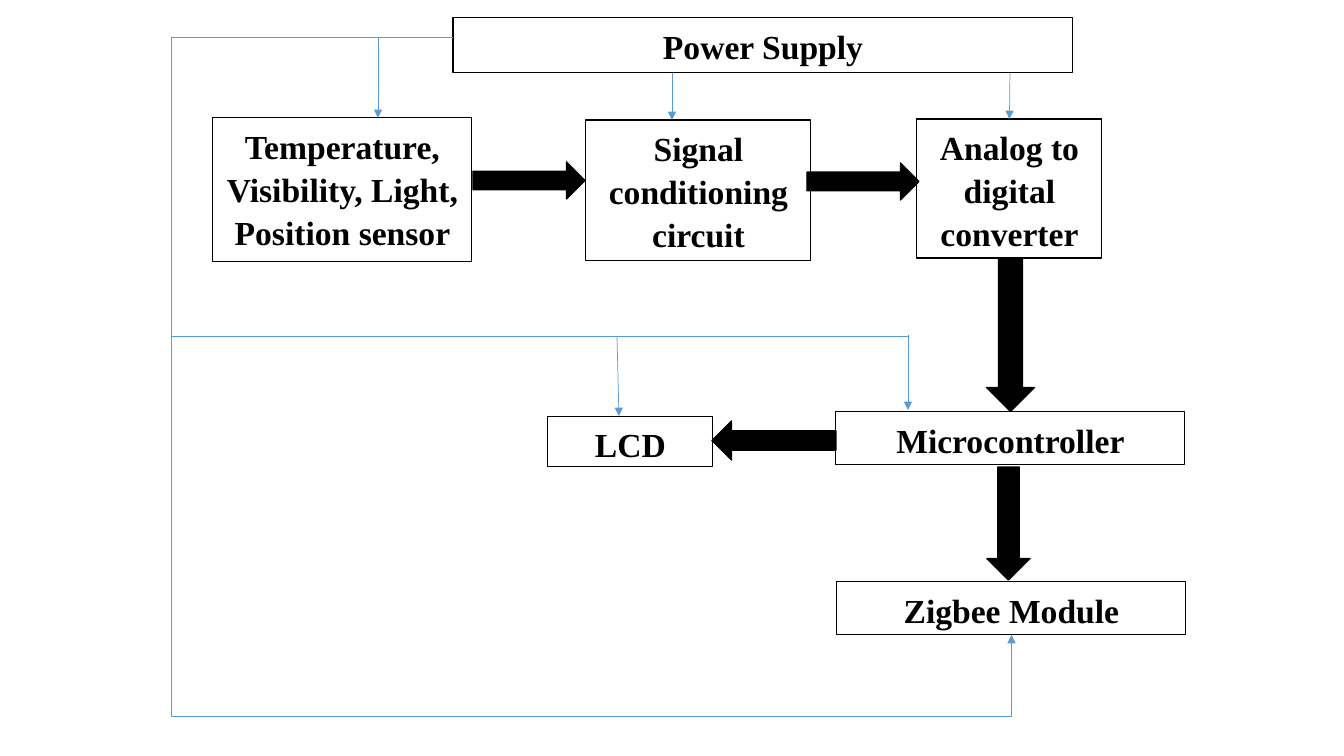
from lxml.etree import SubElement
from pptx import Presentation
from pptx.dml.color import RGBColor
from pptx.enum.shapes import MSO_CONNECTOR as Connector, MSO_SHAPE as Shape
from pptx.enum.text import MSO_ANCHOR as Anchor, PP_ALIGN as Align
from pptx.oxml.ns import qn
from pptx.util import Pt

EMU_PER_PX = 914400 / 100.8


def px(value):
    return round(value * EMU_PER_PX)


def color(hex_string):
    return RGBColor.from_string(hex_string)


class BlockDiagram:
    font_name = "Times New Roman"
    font_size = 24
    ink = "000000"
    paper = "FFFFFF"
    wire_color = "5B9BD5"

    def __init__(self, presentation):
        self.slide = presentation.slides.add_slide(presentation.slide_layouts[6])

    def add_shape(self, kind, box, fill, line_width):
        shape = self.slide.shapes.add_shape(kind, *map(px, box))
        shape.shadow.inherit = False
        shape.fill.solid()
        shape.fill.fore_color.rgb = color(fill)
        shape.line.color.rgb = color(self.ink)
        shape.line.width = Pt(line_width)
        return shape

    def block(self, text, *box):
        shape = self.add_shape(Shape.RECTANGLE, box, self.paper, 0.75)
        frame = shape.text_frame
        frame.word_wrap = True
        frame.vertical_anchor = Anchor.TOP
        paragraph = frame.paragraphs[0]
        paragraph.alignment = Align.CENTER
        paragraph.line_spacing = 1.07
        paragraph.space_after = Pt(8)
        run = paragraph.add_run()
        run.text = text
        run.font.name = self.font_name
        run.font.size = Pt(self.font_size)
        run.font.bold = True
        run.font.color.rgb = color(self.ink)
        return shape

    def flow_arrow(self, left, top, width, height, rotation=0):
        box = (left, top, width, height)
        shape = self.add_shape(Shape.RIGHT_ARROW, box, self.ink, 1)
        shape.rotation = rotation

    def wire(self, start, end, arrow=False, kind=Connector.STRAIGHT):
        connector = self.slide.shapes.add_connector(kind, *map(px, start + end))
        connector.line.color.rgb = color(self.wire_color)
        connector.line.width = Pt(0.5)
        properties = connector._element.spPr
        if arrow:
            SubElement(properties.find(qn("a:ln")), qn("a:tailEnd"), type="triangle")
        SubElement(properties, qn("a:effectLst"))
        return connector

    def bent_wire(self, start, end, adjustments):
        connector = self.wire(start, end, True, Connector.ELBOW)
        geometry = connector._element.spPr.find(qn("a:prstGeom"))
        geometry.set("prst", "bentConnector4")
        guides = geometry.find(qn("a:avLst"))
        for number, value in enumerate(adjustments, 1):
            SubElement(guides, qn("a:gd"), name=f"adj{number}", fmla=f"val {value}")
        return connector


def main():
    presentation = Presentation()
    presentation.slide_width = px(1344)
    presentation.slide_height = px(756)
    diagram = BlockDiagram(presentation)

    diagram.block("Temperature, Visibility, Light, Position sensor", 213, 118, 259, 144)
    diagram.block("Signal conditioning circuit", 586, 120, 225, 141)
    converter = diagram.block("Analog to digital converter", 917, 119, 185, 139)
    diagram.block("Microcontroller", 836, 412, 349, 53)
    zigbee = diagram.block("Zigbee Module", 837, 582, 349, 53)
    diagram.block("LCD", 548, 416, 165, 51)
    diagram.block("Power Supply", 453, 18, 620, 55)

    diagram.flow_arrow(473, 162, 112, 37)
    diagram.flow_arrow(807, 163, 112, 37)
    diagram.flow_arrow(712, 421, 124, 39, 180)
    diagram.flow_arrow(934, 311, 153, 48, 90)
    diagram.flow_arrow(952, 502, 113, 43, 90)

    rail, feed, bus = 171, 37, 336
    diagram.wire((378, feed), (378, 118), True)
    diagram.wire((617, bus), (619, 416), True)
    diagram.wire((908, 335), (908, 410), True)
    diagram.wire((908, bus), (rail, bus))
    diagram.wire((rail, feed), (rail, 599))
    diagram.wire((rail, feed), (453, feed))
    diagram.wire((672, 73), (672, 120), True)
    diagram.wire((1010, 73), (1010, 119), True).end_connect(converter, 0)
    zigbee_wire = diagram.bent_wire((rail, 598), (1011, 635), (0, 320000))
    zigbee_wire.end_connect(zigbee, 2)

    presentation.save("out.pptx")


if __name__ == "__main__":
    main()
